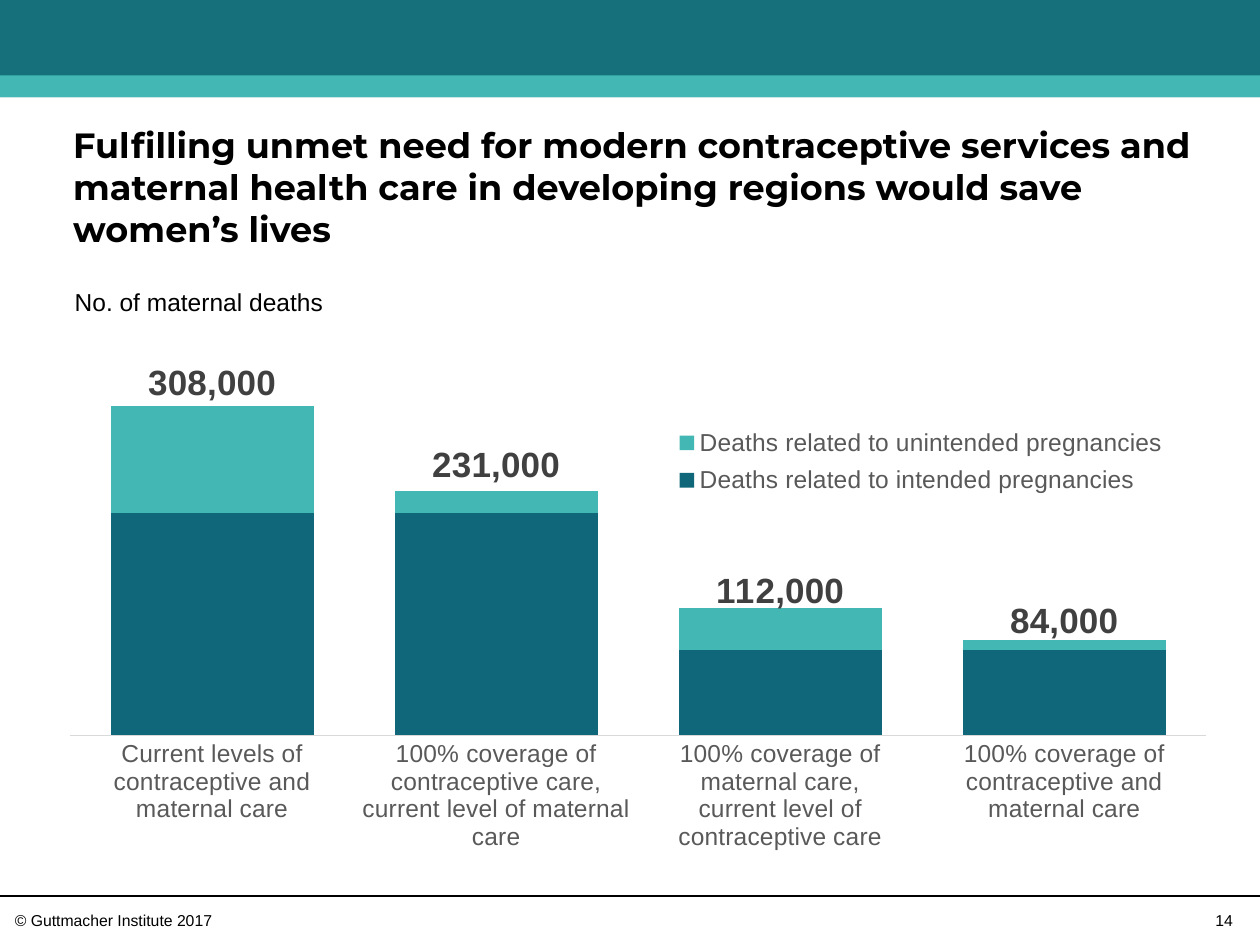
from lxml import etree
from pptx import Presentation
from pptx.chart.data import CategoryChartData
from pptx.dml.color import RGBColor
from pptx.enum import chart as charts, shapes, text
from pptx.oxml import parse_xml
from pptx.oxml.ns import nsdecls, qn
from pptx.util import Pt

BLACK = RGBColor(0, 0, 0)
DARK_TEAL = RGBColor(0x15, 0x70, 0x7C)
BAR_TEAL = RGBColor(0x0F, 0x67, 0x79)
LIGHT_TEAL = RGBColor(0x43, 0xB7, 0xB3)
LABEL_GRAY = RGBColor(0x40, 0x40, 0x40)
TEXT_GRAY = RGBColor(0x59, 0x59, 0x59)
AXIS_GRAY = RGBColor(0xD9, 0xD9, 0xD9)


def style(font, size, color, name="Arial", bold=False):
    font.size, font.name, font.bold = Pt(size), name, bold
    font.color.rgb = color


def set_layout(parent, index, target, x, y, w, h):
    """Give a chart part a manual layout in fractions of the chart."""
    for old in parent.findall(qn("c:layout")):
        parent.remove(old)
    parent.insert(index, parse_xml(
        f'<c:layout {nsdecls("c")}><c:manualLayout>{target}'
        '<c:xMode val="edge"/><c:yMode val="edge"/>'
        f'<c:x val="{x}"/><c:y val="{y}"/><c:w val="{w}"/><c:h val="{h}"/>'
        '</c:manualLayout></c:layout>'))


presentation = Presentation()
presentation.slide_width, presentation.slide_height = Pt(720), Pt(540)
slide = presentation.slides.add_slide(presentation.slide_layouts[5])

# Header bands and footer rule
for top, height, color in [(0, 55.5, DARK_TEAL), (43, 12.5, LIGHT_TEAL)]:
    band = slide.shapes.add_shape(
        shapes.MSO_SHAPE.RECTANGLE, 0, Pt(top), Pt(720), Pt(height))
    band.shadow.inherit = False
    band.fill.solid()
    band.fill.fore_color.rgb = color
    band.line.fill.background()

rule = slide.shapes.add_connector(
    shapes.MSO_CONNECTOR.STRAIGHT, 0, Pt(512), Pt(720), Pt(512))
rule.line.color.rgb = BLACK
rule.line.width = Pt(0.75)
etree.SubElement(rule._element.spPr, qn("a:effectLst"))

# Title
title = slide.shapes.title
title.left, title.top, title.width, title.height = Pt(41.8), Pt(88.5), Pt(643.5), Pt(54)
frame = title.text_frame
frame.text = ("Fulfilling unmet need for modern contraceptive services and maternal "
              "health care in developing regions would save women’s lives")
frame.margin_left = frame.margin_top = frame.margin_right = frame.margin_bottom = 0
frame.word_wrap = True
frame.auto_size = text.MSO_AUTO_SIZE.NONE
frame.vertical_anchor = text.MSO_ANCHOR.BOTTOM
frame.paragraphs[0].alignment = text.PP_ALIGN.LEFT
style(frame.paragraphs[0].font, 20, BLACK, "Montserrat", True)

# Chart: stacked deaths, with totals carried by an invisible line
data = CategoryChartData(number_format="0")
data.categories = [
    "Current levels of contraceptive and maternal care",
    "100% coverage of contraceptive care, current level of maternal care",
    "100% coverage of maternal care,\ncurrent level of contraceptive care",
    "100% coverage of contraceptive and maternal care",
]
data.add_series("Deaths related to intended pregnancies", [210000, 210000, 80000, 80000])
data.add_series("Deaths related to unintended pregnancies", [100000, 20000, 40000, 10000])
data.add_series("Total", [308000, 231000, 112000, 84000])
chart = slide.shapes.add_chart(
    charts.XL_CHART_TYPE.COLUMN_STACKED,
    Pt(29.5), Pt(164), Pt(662.5), Pt(344), data).chart
chart.has_title = False
style(chart.font, 14, TEXT_GRAY)

columns = chart.plots[0]
columns.gap_width, columns.overlap = 40, 100
columns.vary_by_categories = False
for series, color in zip(columns.series, [BAR_TEAL, LIGHT_TEAL]):
    series.format.fill.solid()
    series.format.fill.fore_color.rgb = color

bar_chart = chart._chartSpace.find(".//" + qn("c:barChart"))
total = bar_chart.findall(qn("c:ser"))[2]
for bar_only in total.findall(qn("c:invertIfNegative")):
    total.remove(bar_only)
line_chart = parse_xml(
    f'<c:lineChart {nsdecls("c")}><c:grouping val="standard"/>'
    '<c:varyColors val="0"/><c:marker val="1"/></c:lineChart>')
line_chart.insert(2, total)
for axis_id in bar_chart.findall(qn("c:axId")):
    etree.SubElement(line_chart, qn("c:axId"), val=axis_id.get("val"))
bar_chart.addnext(line_chart)

totals = chart.plots[1].series[0]
totals.smooth = False
totals.format.line.fill.background()
totals.marker.style = charts.XL_MARKER_STYLE.NONE
labels = totals.data_labels
labels.show_value = True
labels.position = charts.XL_LABEL_POSITION.ABOVE
labels.number_format, labels.number_format_is_linked = "#,##0", False
style(labels.font, 20, LABEL_GRAY, bold=True)

category_axis, value_axis = chart.category_axis, chart.value_axis
category_axis.major_tick_mark = charts.XL_TICK_MARK.NONE
category_axis.format.line.color.rgb = AXIS_GRAY
category_axis.format.line.width = Pt(0.75)
style(category_axis.tick_labels.font, 14, TEXT_GRAY)
value_axis.minimum_scale, value_axis.maximum_scale = 0, 350000
value_axis.has_major_gridlines = False
value_axis.tick_label_position = charts.XL_TICK_LABEL_POSITION.NONE
value_axis.format.line.fill.background()

chart.has_legend = True
chart.legend.position = charts.XL_LEGEND_POSITION.RIGHT
chart.legend.include_in_layout = False
style(chart.legend.font, 14, TEXT_GRAY)
legend = chart.legend._element
set_layout(legend, 1, "", 0.53, 0.22, 0.44, 0.14)
legend.insert(1, parse_xml(
    f'<c:legendEntry {nsdecls("c")}><c:idx val="2"/><c:delete val="1"/></c:legendEntry>'))
set_layout(bar_chart.getparent(), 0, '<c:layoutTarget val="inner"/>', 0.016, 0.128, 0.98, 0.617)

# Axis caption, copyright line and slide number
for left, top, width, height, words, size, alignment in [
    (-46.8, 164, 321, 21.5, "No. of maternal deaths", 14, text.PP_ALIGN.CENTER),
    (8.5, 520.5, 132.5, 11, "© Guttmacher Institute 2017", 9, text.PP_ALIGN.LEFT),
    (672, 520.5, 32.5, 11, "14", 9, text.PP_ALIGN.RIGHT),
]:
    box = slide.shapes.add_textbox(Pt(left), Pt(top), Pt(width), Pt(height))
    frame = box.text_frame
    frame.margin_left = frame.margin_top = frame.margin_right = frame.margin_bottom = 0
    frame.word_wrap = True
    paragraph = frame.paragraphs[0]
    paragraph.text = words
    paragraph.alignment = alignment
    style(paragraph.font, size, BLACK)

presentation.save("out.pptx")
